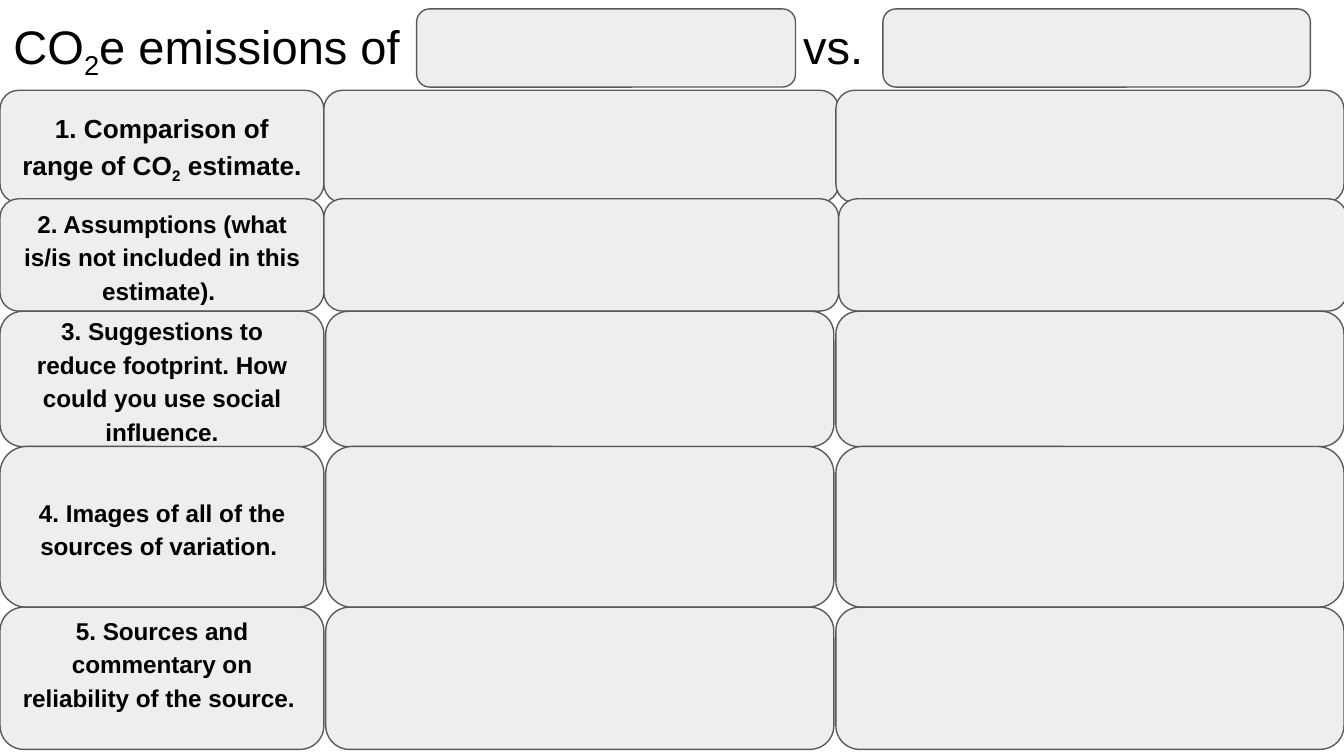
"""Build a worksheet slide for comparing the CO₂e emissions of two items."""
from lxml import etree
from pptx import Presentation
from pptx.dml.color import RGBColor
from pptx.enum.shapes import MSO_SHAPE
from pptx.enum.text import MSO_ANCHOR, MSO_AUTO_SIZE, PP_ALIGN
from pptx.oxml.ns import qn
from pptx.util import Pt

ROUNDED = MSO_SHAPE.ROUNDED_RECTANGLE
MIDDLE = MSO_ANCHOR.MIDDLE
NO_AUTOFIT = MSO_AUTO_SIZE.NONE
LEFT, CENTER = PP_ALIGN.LEFT, PP_ALIGN.CENTER
COLORS = {"panel": "EEEEEE", "border": "595959", "text": "000000"}
INSET = 7.2


def add_panel(left, top, width, height):
    panel = slide.shapes.add_shape(ROUNDED, Pt(left), Pt(top), Pt(width), Pt(height))
    panel.shadow.inherit = False
    panel.fill.solid()
    panel.fill.fore_color.rgb = RGBColor.from_string(COLORS["panel"])
    panel.line.color.rgb = RGBColor.from_string(COLORS["border"])
    panel.line.width = Pt(0.75)
    return panel


def write_line(paragraph, parts, size, bold, align):
    paragraph.alignment = align
    paragraph.font.name = "Arial"
    paragraph.font.size = Pt(size)
    paragraph.font.bold = bold
    paragraph.font.color.rgb = RGBColor.from_string(COLORS["text"])
    for part in parts:
        run = paragraph.add_run()
        run.text = part
        if part == "2":
            run.font._element.set("baseline", "-25000")


prs = Presentation()
prs.slide_width, prs.slide_height = Pt(720), Pt(405)
slide = prs.slides.add_slide(prs.slide_layouts[5])

heading = slide.shapes.title
heading.left, heading.top, heading.width, heading.height = Pt(0), Pt(3.6), Pt(671), Pt(45.4)
heading_frame = heading.text_frame
heading_frame.auto_size = NO_AUTOFIT
heading_frame.vertical_anchor = MIDDLE
heading_frame.margin_left = heading_frame.margin_right = Pt(INSET)
heading_frame.margin_top = heading_frame.margin_bottom = Pt(INSET)
heading_line = heading_frame.paragraphs[0]
write_line(heading_line, ["CO", "2", "e emissions of\tvs."], 25.2, False, LEFT)
heading_properties = heading_line._p.get_or_add_pPr()
tab_stops = etree.Element(qn("a:tabLst"))
etree.SubElement(tab_stops, qn("a:tab"), pos=str(Pt(423)), algn="l")
heading_properties.insert(0, tab_stops)

rows = [
    (48.4, 60.2, 14, ["1. Comparison of range of CO", "2", " estimate."]),
    (106.5, 60.2, 13, ["2. Assumptions (what is/is not included in this estimate). "]),
    (166.8, 72.5, 13, ["3. Suggestions to reduce footprint. How could you use social influence."]),
    (239.2, 86.2, 13, ["4. Images of all of the sources of variation. "]),
    (325.3, 76.2, 13, ["5. Sources and commentary on reliability of the source. "]),
]

for row_number, (top, height, size, question) in enumerate(rows, 1):
    prompt = add_panel(0, top, 173.5, height)
    frame = prompt.text_frame
    frame.word_wrap = True
    frame.vertical_anchor = MIDDLE
    frame.margin_left = frame.margin_right = Pt(INSET)
    frame.margin_top = Pt(INSET)
    frame.margin_bottom = Pt(25 if row_number == len(rows) else INSET)
    write_line(frame.paragraphs[0], question, size, True, CENTER)
    frame.paragraphs[0].line_spacing = 1.15

for row_number, (top, height, size, question) in enumerate(rows, 1):
    first_left, first_width = (173.5, 275.8) if row_number <= 2 else (174.5, 272.2)
    second_left = 449.3 if row_number == 2 else 447.8
    add_panel(first_left, top, first_width, height)
    add_panel(second_left, top, 272.2, height)

for name_left, name_width in [(223.2, 203), (473, 229)]:
    add_panel(name_left, 4.8, name_width, 41.9)

prs.save("out.pptx")
